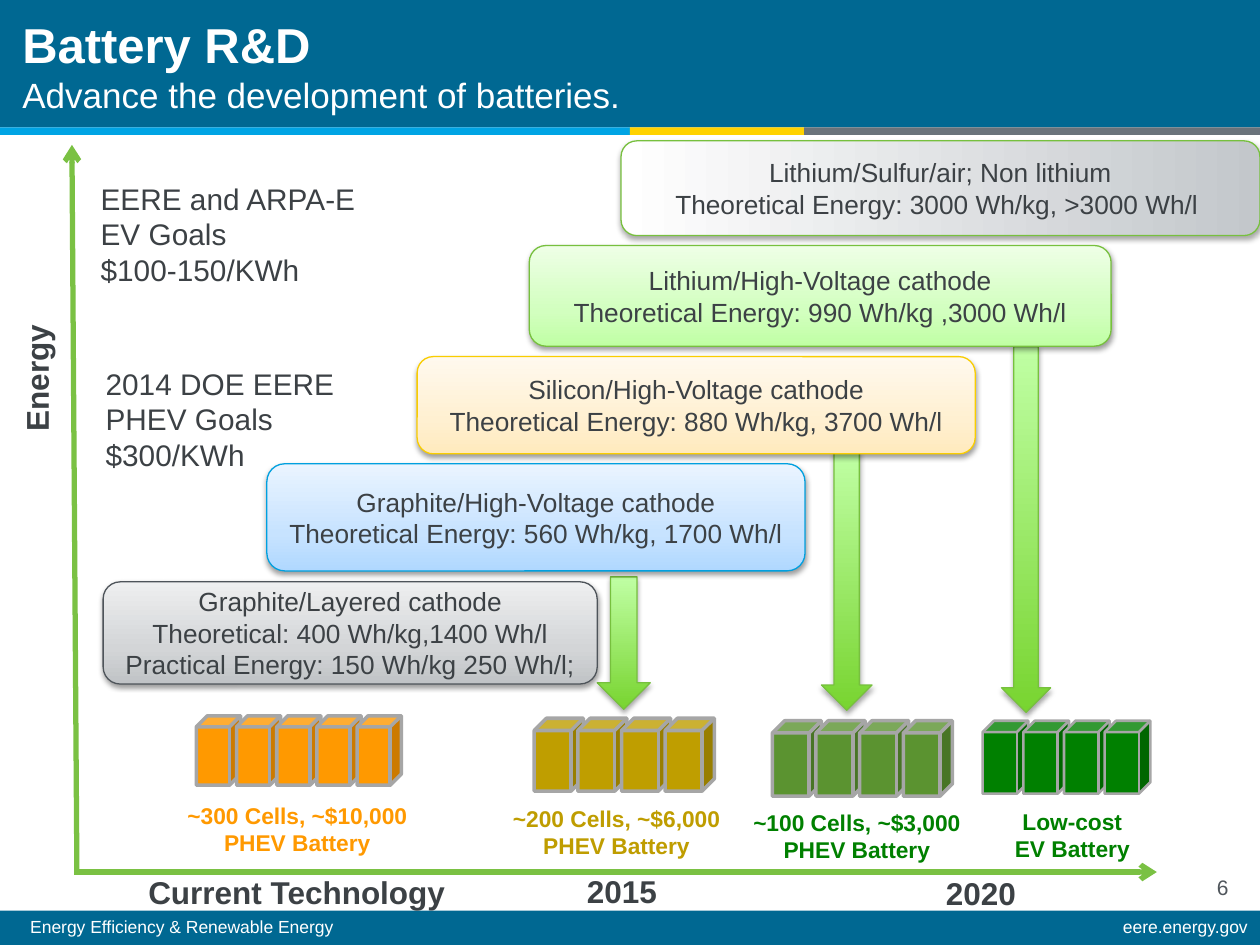
from dataclasses import dataclass

from lxml import etree
from pptx import Presentation
from pptx.dml.color import RGBColor
from pptx.enum.shapes import MSO_CONNECTOR, MSO_SHAPE
from pptx.enum.text import MSO_ANCHOR, PP_ALIGN
from pptx.oxml.ns import qn
from pptx.util import Cm, Pt

RECT, ROUND = MSO_SHAPE.RECTANGLE, MSO_SHAPE.ROUNDED_RECTANGLE
DOWN, CUBE = MSO_SHAPE.DOWN_ARROW, MSO_SHAPE.CUBE
LINE = MSO_CONNECTOR.STRAIGHT
LEFT, MID, RIGHT = PP_ALIGN.LEFT, PP_ALIGN.CENTER, PP_ALIGN.RIGHT
TOP, MIDDLE = MSO_ANCHOR.TOP, MSO_ANCHOR.MIDDLE
INK, WHITE, BLUE, LIME, EDGE = "3C4145", "FFFFFF", "006892", "7AC143", "77C03E"
SOFT, HARD = (35, 1.8), (38, 1.6)  # shadow opacity in percent, distance in points

Place = tuple[float, float, float, float]  # left, top, width, height in cm
Stops = tuple[tuple[int, str], ...]


@dataclass
class Tech:
    at: Place
    lines: tuple[str, ...]
    stops: Stops
    edge: str
    angle: int = 90
    shade: tuple[int, float] = HARD


@dataclass
class Pack:
    at: Place  # the first cell
    step: float
    count: int
    fill: str
    width: float
    label: Place
    lines: tuple[str, ...]
    ink: str


@dataclass
class Note:
    at: Place
    lines: tuple[str, ...]
    size: int = 18
    bold: bool = True


def paint(part, color: str) -> None:
    part.rgb = RGBColor.from_string(color)


def write(frame, lines, size=18, color=INK, bold=False, align=LEFT,
          anchor=TOP, wrap=True, space=None) -> None:
    frame.word_wrap = wrap
    frame.vertical_anchor = anchor
    for i, line in enumerate(lines):
        para = frame.add_paragraph() if i else frame.paragraphs[0]
        para.text = line
        para.alignment = align
        para.line_spacing = space
        para.font.name = "Arial"
        para.font.size = Pt(size)
        para.font.bold = bold
        paint(para.font.color, color)


def label(slide, at: Place, lines, **form):
    box = slide.shapes.add_textbox(*map(Cm, at))
    write(box.text_frame, lines, **form)
    return box


def block(shapes, kind, at: Place, fill=None, edge=None, width=0.75):
    shape = shapes.add_shape(kind, *map(Cm, at))
    shape.shadow.inherit = False
    if fill:
        shape.fill.solid()
        paint(shape.fill.fore_color, fill)
    if edge:
        paint(shape.line.color, edge)
        shape.line.width = Pt(width)
    else:
        shape.line.fill.background()
    return shape


def glow(slide, kind, at: Place, stops: Stops, edge: str, angle=90, shade=SOFT):
    """Draw a shape with a gradient fill and a drop shadow."""
    shape = block(slide.shapes, kind, at, edge=edge)
    shape.fill.gradient()
    shape.fill.gradient_angle = angle
    props = shape._element.spPr
    ramp = props.find(".//" + qn("a:gsLst"))
    ramp.clear()
    for pos, color in stops:
        stop = etree.SubElement(ramp, qn("a:gs"), pos=str(pos * 1000))
        etree.SubElement(stop, qn("a:srgbClr"), val=color)
    alpha, dist = shade
    drop = etree.SubElement(
        props.find(qn("a:effectLst")), qn("a:outerShdw"), blurRad=str(Pt(3.1)),
        dist=str(Pt(dist)), dir="5400000", rotWithShape="0")
    tint = etree.SubElement(drop, qn("a:srgbClr"), val="000000")
    etree.SubElement(tint, qn("a:alpha"), val=str(alpha * 1000))
    return shape


def axis(slide, ends: Place) -> None:
    line = slide.shapes.add_connector(LINE, *map(Cm, ends))
    paint(line.line.color, LIME)
    line.line.width = Pt(3)
    props = line._element.spPr
    etree.SubElement(props.find(qn("a:ln")), qn("a:tailEnd"), type="arrow")
    etree.SubElement(props, qn("a:effectLst"))


def cells(slide, pack: Pack) -> None:
    group = slide.shapes.add_group_shape()
    x, y, w, h = pack.at
    for i in range(pack.count):
        block(group.shapes, CUBE, (x + i * pack.step, y, w, h),
              pack.fill, "A6A6A6", pack.width)
    label(slide, pack.label, pack.lines, size=13, color=pack.ink,
          bold=True, align=MID)


BANDS = [
    ((0, 0, 25.4, 2.57), BLUE),
    ((0, 18.36, 25.4, 0.69), BLUE),
    ((0, 2.57, 12.7, 0.15), "00A4E4"),
    ((12.7, 2.57, 3.51, 0.15), "FFD200"),
    ((16.21, 2.57, 9.19, 0.15), "6A737B"),
]
AXES = [(1.5, 17.58, 23.32, 17.58), (1.55, 17.58, 1.45, 2.92)]
DROPS = [
    (12.04, 11.63, 1.07, 2.67),
    (16.56, 9.09, 1.02, 5.23),
    (20.19, 6.99, 0.99, 7.37),
]
NOTES = [
    Note((1.78, 3.51, 5.89, 2.44),
         ("EERE and ARPA-E", "EV Goals", "$100-150/KWh"), 17, False),
    Note((1.88, 7.24, 5.69, 2.44),
         ("2014 DOE EERE", "PHEV Goals", "$300/KWh"), 17, False),
    Note((2.74, 17.48, 7.39, 1.02), ("Current Technology",)),
    Note((11.58, 17.45, 2.49, 1.02), ("2015",)),
    Note((18.82, 17.5, 2.49, 1.02), ("2020",)),
]
TECHS = [
    Tech((12.52, 2.84, 12.88, 1.91),
         ("Lithium/Sulfur/air; Non lithium",
          "Theoretical Energy: 3000 Wh/kg, >3000 Wh/l "),
         ((0, WHITE), (100, "C3C7CB")), EDGE, 0, SOFT),
    Tech((2.08, 11.73, 9.96, 2.06),
         ("Graphite/Layered cathode", "Theoretical: 400 Wh/kg,1400 Wh/l",
          "Practical Energy: 150 Wh/kg 250 Wh/l;"),
         ((0, "C0C3C6"), (35, "D3D5D7"), (100, "EEEFF0")), "4E545A"),
    Tech((5.38, 9.35, 10.85, 2.16),
         ("Graphite/High-Voltage cathode",
          "Theoretical Energy: 560 Wh/kg, 1700 Wh/l"),
         ((0, "B0D8FF"), (35, "C7E3FF"), (100, "EAF4FF")), "00A0DF"),
    Tech((8.41, 7.19, 11.25, 1.96),
         ("Silicon/High-Voltage cathode",
          "Theoretical Energy: 880 Wh/kg, 3700 Wh/l"),
         ((0, "FFEABD"), (35, "FFF0D1"), (100, "FFF9EE")), "F9CD00"),
    Tech((10.67, 4.95, 11.73, 2.03),
         ("Lithium/High-Voltage cathode",
          "Theoretical Energy: 990 Wh/kg ,3000 Wh/l"),
         ((0, "C0FFA4"), (35, "D2FFBF"), (100, "EEFFE6")), EDGE),
]
PACKS = [
    Pack((3.96, 14.43, 0.89, 1.4), 0.81, 5, "FF9900", 2, (3.3, 16.03, 5.38, 1.37),
         ("~300 Cells, ~$10,000", "PHEV Battery"), "FF9900"),
    Pack((10.77, 14.48, 0.99, 1.47), 0.88, 4, "BF9E00", 2, (10.01, 16.1, 4.83, 1.37),
         ("~200 Cells, ~$6,000", "PHEV Battery"), "BF9D00"),
    Pack((15.57, 14.53, 0.99, 1.52), 0.88, 4, "5B9330", 2, (14.88, 16.18, 4.78, 1.37),
         ("~100 Cells, ~$3,000", "PHEV Battery"), "008000"),
    Pack((19.81, 14.53, 0.92, 1.47), 0.82, 4, "008000", 1.5, (19.71, 16.15, 3.81, 1.37),
         ("Low-cost", "EV Battery"), "008000"),
]


def main() -> None:
    deck = Presentation()
    deck.slide_width, deck.slide_height = Cm(25.4), Cm(19.05)
    slide = deck.slides.add_slide(deck.slide_layouts[6])

    # Header and footer
    for at, fill in BANDS:
        block(slide.shapes, RECT, at, fill)
    title = label(slide, (0.2, 0.05, 15.24, 2.51),
                  ("Battery R&D", "Advance the development of batteries."),
                  size=28, color=WHITE, bold=True, anchor=MIDDLE)
    sub = title.text_frame.paragraphs[1].font
    sub.size, sub.bold = Pt(20), False
    label(slide, (0.36, 18.39, 14.6, 0.66), ("Energy Efficiency & Renewable Energy",),
          size=10, color=WHITE, space=0.9)
    label(slide, (15.21, 18.39, 10.19, 0.66), ("eere.energy.gov",),
          size=10, color=WHITE, align=RIGHT, space=0.9)
    label(slide, (24.28, 17.5, 1.09, 0.76), ("6",), size=12, color="50565C")

    # Axes and their captions
    for ends in AXES:
        axis(slide, ends)
    name = label(slide, (-0.61, 7.09, 2.69, 1.02), ("Energy",), bold=True, wrap=False)
    name.rotation = 270
    for note in NOTES:
        label(slide, note.at, note.lines, size=note.size, bold=note.bold)

    # Arrows lie behind the technology boxes
    for at in DROPS:
        glow(slide, DOWN, at, ((0, "78D430"), (100, "C0FFA4")), EDGE)
    for tech in TECHS:
        box = glow(slide, ROUND, tech.at, tech.stops, tech.edge, tech.angle, tech.shade)
        write(box.text_frame, tech.lines, size=15, align=MID, anchor=MIDDLE)

    # Battery packs
    for pack in PACKS:
        cells(slide, pack)

    deck.save("out.pptx")


if __name__ == "__main__":
    main()
